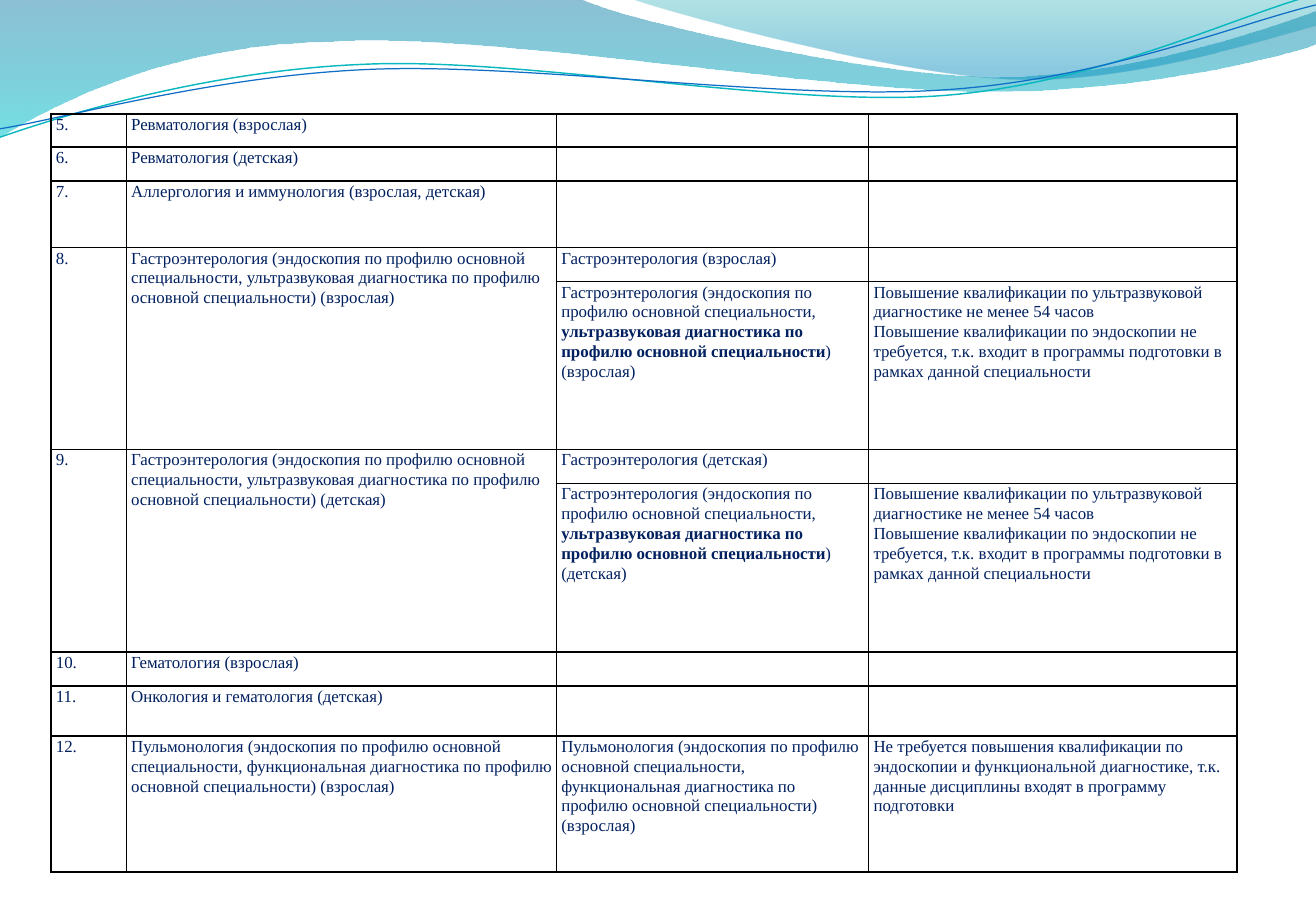
import pptx
import pptx.dml.color
import pptx.oxml
import pptx.oxml.ns
import pptx.util
from pptx.util import Inches

NAVY = pptx.dml.color.RGBColor(0x00, 0x20, 0x60)
BLACK = pptx.dml.color.RGBColor(0x00, 0x00, 0x00)
BLUE = pptx.dml.color.RGBColor(0x00, 0x74, 0xA1)
CYAN = pptx.dml.color.RGBColor(0x00, 0xC6, 0xCF)
TEAL = pptx.dml.color.RGBColor(0x00, 0xA1, 0xA9)
SKY = pptx.dml.color.RGBColor(0x00, 0x8B, 0xBF)
LINE_TEAL = pptx.dml.color.RGBColor(0x0A, 0xB8, 0xBF)
LINE_BLUE = pptx.dml.color.RGBColor(0x0F, 0x6F, 0xC6)

TEXT_FORMAT = {"name": "Times New Roman", "size": pptx.util.Pt(10)}

# A segment of two numbers is a straight line, one of six is a Bezier curve.
# Gradient stops: position, colour, opacity in percent.
BANDS = [
    ([(0, 0), (4.77, -0.01), (5.15, 0.17, 7.19, 0.63, 8.22, 0.63),
      (9.24, 0.63, 10.38, 0.26, 10.83, 0.09), (10.84, 0.36),
      (10.65, 0.44, 9.42, 0.76, 8.08, 0.75), (6.74, 0.75, 4.14, 0.28, 2.79, 0.34),
      (1.4, 0.36, 0.5, 0.83, -0.01, 1.13)],
     [(0, BLUE, 45), (1, CYAN, 55)]),
    ([(5.19, -0.01), (5.52, 0.11, 7.39, 0.62, 8.33, 0.65),
      (9.27, 0.69, 10.42, 0.32, 10.83, 0.21), (10.83, 0)],
     [(0, TEAL, 30), (0.8, SKY, 45)]),
]
WAVES = [
    ([(0, 1.13), (0.52, 0.95, 1.71, 0.58, 3, 0.53), (4.28, 0.47, 6.42, 0.88, 7.72, 0.79),
      (9.02, 0.7, 10.17, 0.13, 10.81, -0.04)], LINE_TEAL, 0.85),
    ([(0, 1.06), (0.51, 0.98, 1.77, 0.62, 3.07, 0.57), (4.36, 0.52, 6.47, 0.83, 7.76, 0.74),
      (9.06, 0.66, 10.2, 0.19, 10.83, 0.04)], LINE_BLUE, 0.75),
]

COLUMN_WIDTHS = [0.62, 3.54, 2.57, 3.03]
ROW_HEIGHTS = [0.27, 0.28, 0.55, 0.28, 1.38, 0.28, 1.39, 0.28, 0.41, 1.12]

GASTRO = ("Гастроэнтерология (эндоскопия по профилю основной специальности, "
          "{}ультразвуковая диагностика по профилю основной специальности{}) ({})")
PULMONOLOGY = ("Пульмонология (эндоскопия по профилю основной специальности, функциональная "
               "диагностика по профилю основной специальности) (взрослая)")
TRAINING = ("Повышение квалификации по ультразвуковой диагностике не менее 54 часов\n"
            "Повышение квалификации по эндоскопии не требуется, т.к. входит в программы "
            "подготовки в рамках данной специальности")
NO_TRAINING = ("Не требуется повышения квалификации по эндоскопии и функциональной диагностике, "
               "т.к. данные дисциплины входят в программу подготовки")


def gastro_rows(number, age):
    return [
        (number, GASTRO.format("", "", age), f"Гастроэнтерология ({age})", ""),
        ("", "", GASTRO.format("*", "*", age), TRAINING),
    ]


ROWS = [
    ("5.", "Ревматология (взрослая)", "", ""),
    ("6.", "Ревматология (детская)", "", ""),
    ("7.", "Аллергология и иммунология (взрослая, детская)", "", ""),
    *gastro_rows("8.", "взрослая"),
    *gastro_rows("9.", "детская"),
    ("10.", "Гематология (взрослая)", "", ""),
    ("11.", "Онкология и гематология (детская)", "", ""),
    ("12.", PULMONOLOGY, PULMONOLOGY, NO_TRAINING),
]


def set_format(target, values):
    for name, value in values.items():
        setattr(target, name, value)


def bend_lines(shape, segments):
    """Join the three lines drawn for each curve segment into one Bezier curve."""
    lines = iter(shape._element.spPr.findall(".//" + pptx.oxml.ns.qn("a:lnTo")))
    for segment in segments[1:]:
        group = [next(lines) for _ in range(len(segment) // 2)]
        if len(group) == 1:
            continue
        curve = pptx.oxml.parse_xml(f'<a:cubicBezTo {pptx.oxml.ns.nsdecls("a")}/>')
        group[0].addprevious(curve)
        for line in group:
            curve.append(line[0])
            line.getparent().remove(line)


def add_outline(slide, segments, close):
    points = [(Inches(segment[index]), Inches(segment[index + 1]))
              for segment in segments for index in range(0, len(segment), 2)]
    builder = slide.shapes.build_freeform(*points[0])
    builder.add_line_segments(points[1:], close=close)
    shape = builder.convert_to_shape()
    bend_lines(shape, segments)
    shape.shadow.inherit = False
    return shape


def add_band(slide, segments, stops):
    band = add_outline(slide, segments, close=True)
    band.line.fill.background()
    band.fill.gradient()
    band.fill.gradient_angle = 270
    for stop, (position, colour, opacity) in zip(band.fill.gradient_stops, stops):
        stop.position = position
        stop.color.rgb = colour
    colours = band._element.spPr.findall(".//" + pptx.oxml.ns.qn("a:srgbClr"))
    for element, (position, colour, opacity) in zip(colours, stops):
        element.append(pptx.oxml.parse_xml(
            f'<a:alpha {pptx.oxml.ns.nsdecls("a")} val="{opacity * 1000}"/>'))


def add_wave(slide, segments, colour, width):
    wave = add_outline(slide, segments, close=False)
    wave.fill.background()
    wave.line.color.rgb = colour
    wave.line.width = pptx.util.Pt(width)


def set_borders(cell):
    properties = cell._tc.get_or_add_tcPr()
    for index, side in enumerate("LRTB"):
        properties.insert(index, pptx.oxml.parse_xml(
            f'<a:ln{side} {pptx.oxml.ns.nsdecls("a")} w="{pptx.util.Pt(1)}"><a:solidFill>'
            f'<a:srgbClr val="{BLACK}"/></a:solidFill></a:ln{side}>'))


def fill_cell(cell, text):
    """Write the text; parts between asterisks are bold."""
    set_format(cell, {"margin_left": Inches(0.04), "margin_right": Inches(0.04),
                      "margin_top": 0, "margin_bottom": 0})
    cell.fill.background()
    set_borders(cell)
    frame = cell.text_frame
    for index, line in enumerate(text.split("\n")):
        para = frame.add_paragraph() if index else frame.paragraphs[0]
        para.line_spacing = 1.07
        if not line:
            para._p.get_or_add_endParaRPr().set("sz", "1000")
            continue
        for part, words in enumerate(line.split("*")):
            span = para.add_run()
            span.text = words
            set_format(span.font, {**TEXT_FORMAT, "bold": part % 2 == 1})
            span.font.color.rgb = NAVY


def add_specialty_table(slide):
    frame = slide.shapes.add_table(len(ROWS), len(COLUMN_WIDTHS), Inches(0.42), Inches(0.94),
                                   Inches(sum(COLUMN_WIDTHS)), Inches(sum(ROW_HEIGHTS)))
    table = frame.table
    set_format(table, {"first_row": False, "horz_banding": False})
    for column, width in zip(table.columns, COLUMN_WIDTHS):
        column.width = Inches(width)
    for row, height, texts in zip(table.rows, ROW_HEIGHTS, ROWS):
        row.height = Inches(height)
        for cell, text in zip(row.cells, texts):
            fill_cell(cell, text)
    for top, (number, *rest) in enumerate(ROWS):
        if not number:
            for column in (0, 1):
                table.cell(top - 1, column).merge(table.cell(top, column))


def main():
    deck = pptx.Presentation()
    set_format(deck, {"slide_width": Inches(10.83), "slide_height": Inches(7.5)})
    slide = deck.slides.add_slide(deck.slide_layouts[6])
    for segments, stops in BANDS:
        add_band(slide, segments, stops)
    for segments, colour, width in WAVES:
        add_wave(slide, segments, colour, width)
    add_specialty_table(slide)
    deck.save("out.pptx")


if __name__ == "__main__":
    main()
